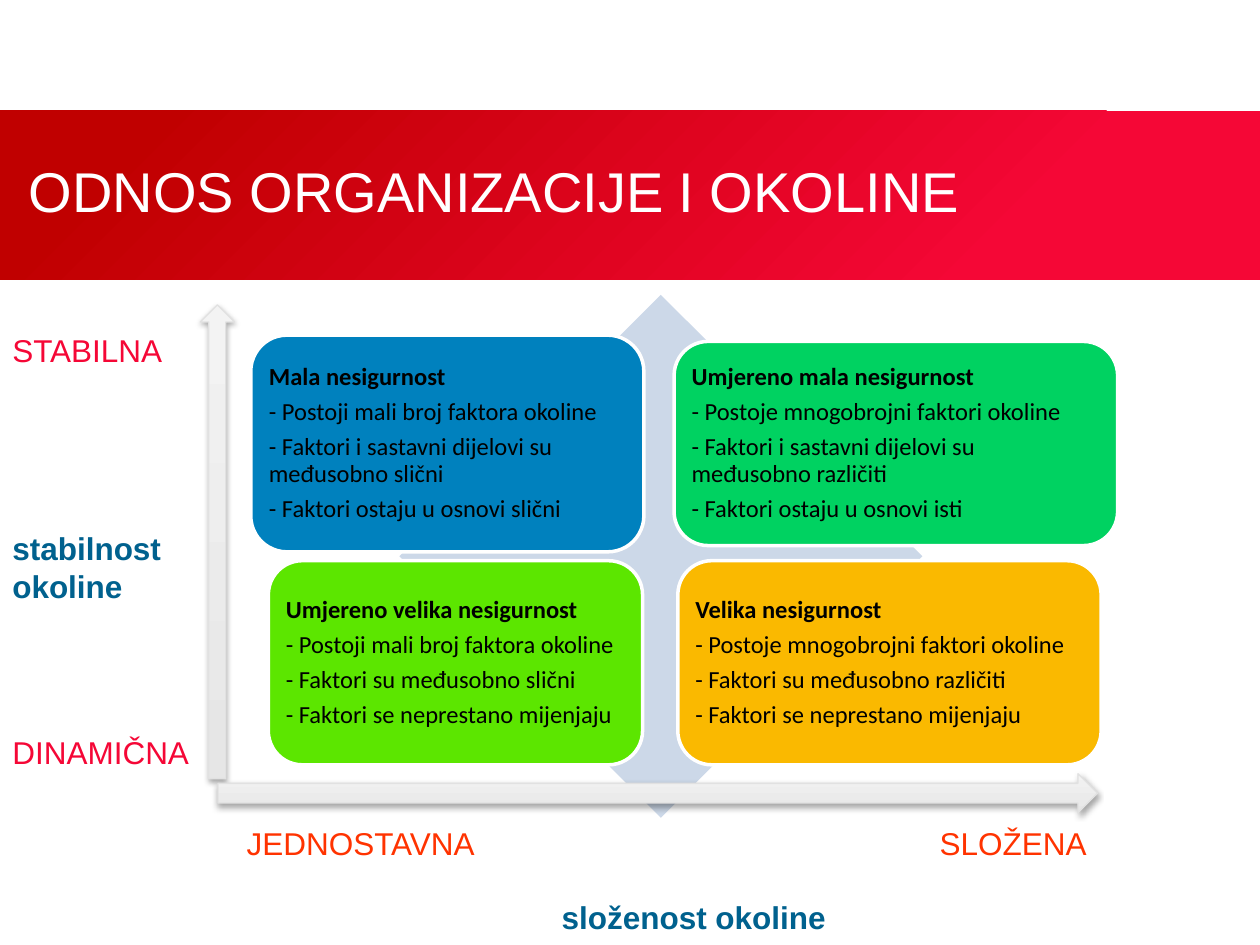
from dataclasses import dataclass

from lxml import etree
from pptx import Presentation
from pptx.dml.color import RGBColor
from pptx.enum.shapes import MSO_SHAPE
from pptx.enum.text import MSO_ANCHOR, PP_ALIGN
from pptx.oxml import parse_xml
from pptx.oxml.ns import nsdecls, qn
from pptx.util import Inches, Pt

RECTANGLE, DIAMOND = MSO_SHAPE.RECTANGLE, MSO_SHAPE.DIAMOND
ROUNDED = MSO_SHAPE.ROUNDED_RECTANGLE
UP_ARROW, RIGHT_ARROW = MSO_SHAPE.UP_ARROW, MSO_SHAPE.RIGHT_ARROW
MIDDLE, LEFT = MSO_ANCHOR.MIDDLE, PP_ALIGN.LEFT


@dataclass(frozen=True)
class Theme:
    red: str = "F50736"
    dark_red: str = "C00000"
    orange: str = "FF3300"
    blue: str = "00618E"
    pale_blue: str = "CCD8E8"
    white: str = "FFFFFF"
    black: str = "000000"
    arrow_dark: str = "E6E6E6"
    arrow_light: str = "F3F3F3"
    arrow_line: str = "E1E1E1"
    heading_font: str = "Arial"
    card_font: str = "Calibri"
    title_size: int = 32
    label_size: int = 18
    card_size: int = 14


THEME = Theme()

# box, fill, heading, points
QUADRANTS = [
    ((1.99, 2.66, 3.12, 1.72), "0081BE", "Mala nesigurnost",
     ["Postoji mali broj faktora okoline",
      "Faktori i sastavni dijelovi su međusobno slični",
      "Faktori ostaju u osnovi slični"]),
    ((5.35, 2.71, 3.52, 1.62), "00D261", "Umjereno mala nesigurnost",
     ["Postoje mnogobrojni faktori okoline",
      "Faktori i sastavni dijelovi su međusobno različiti",
      "Faktori ostaju u osnovi isti"]),
    ((2.13, 4.45, 2.97, 1.62), "5CE600", "Umjereno velika nesigurnost",
     ["Postoji mali broj faktora okoline",
      "Faktori su međusobno slični",
      "Faktori se neprestano mijenjaju"]),
    ((5.38, 4.45, 3.36, 1.62), "FAB900", "Velika nesigurnost",
     ["Postoje mnogobrojni faktori okoline",
      "Faktori su međusobno različiti",
      "Faktori se neprestano mijenjaju"]),
]

# box, text, colour, bold
AXIS_LABELS = [
    ((0, 2.58, 1.43, 0.4), "STABILNA", THEME.red, False),
    ((0, 4.15, 1.94, 0.71), "stabilnost okoline", THEME.blue, True),
    ((0, 5.77, 1.7, 0.4), "DINAMIČNA", THEME.red, False),
    ((1.86, 6.49, 2.2, 0.4), "JEDNOSTAVNA", THEME.orange, False),
    ((7.36, 6.49, 1.5, 0.4), "SLOŽENA", THEME.orange, False),
    ((4.36, 7.08, 2.5, 0.4), "složenost okoline", THEME.blue, True),
]


def inches(box):
    return [Inches(value) for value in box]


def colour(code):
    return RGBColor.from_string(code)


def style_font(font, name, size, code, bold=False):
    font.name, font.size, font.bold = name, Pt(size), bold
    font.color.rgb = colour(code)


def add_shape(page, kind, box, fill=None):
    """Add a preset shape without shadow or line."""
    shape = page.shapes.add_shape(kind, *inches(box))
    shape.shadow.inherit = False
    shape.line.fill.background()
    if fill:
        shape.fill.solid()
        shape.fill.fore_color.rgb = colour(fill)
    return shape


def set_gradient(shape, angle, stops):
    """Fill with two (position, colour) stops; the angle is counter-clockwise."""
    shape.fill.gradient()
    shape.fill.gradient_angle = angle
    for stop, (position, code) in zip(shape.fill.gradient_stops, stops):
        stop.position = position
        stop.color.rgb = colour(code)


def set_outline(shape, code, width):
    shape.line.color.rgb = colour(code)
    shape.line.width = Pt(width)


def add_label(page, box, text, code, size=THEME.label_size, bold=False):
    label = page.shapes.add_textbox(*inches(box))
    frame = label.text_frame
    frame.word_wrap = True
    frame.text = text
    style_font(frame.paragraphs[0].runs[0].font, THEME.heading_font, size, code, bold)
    return label


def add_banner(page, box):
    banner = add_shape(page, RECTANGLE, box)
    set_gradient(banner, 135, [(0.2, THEME.red), (0.89, THEME.dark_red)])
    left, top, width, _ = box
    title = add_label(page, (left + 0.13, top + 0.32, width - 2.24, 0.62),
                      "ODNOS ORGANIZACIJE I OKOLINE", THEME.white, THEME.title_size)
    title.text_frame.vertical_anchor = MIDDLE


def add_quadrant(page, box, fill, heading, points):
    card = add_shape(page, ROUNDED, box, fill)
    set_outline(card, THEME.white, 2)
    frame = card.text_frame
    frame.word_wrap = True
    frame.vertical_anchor = MIDDLE
    frame.margin_left = frame.margin_right = Inches(0.06)
    frame.margin_top = frame.margin_bottom = Inches(0.06)
    frame.text = "\n".join([heading] + [f"- {point}" for point in points])
    for index, para in enumerate(frame.paragraphs):
        para.alignment = LEFT
        para.line_spacing = 0.9
        para.space_after = Pt(4.9)
        style_font(para.runs[0].font, THEME.card_font, THEME.card_size,
                   THEME.black, bold=index == 0)


def add_matrix(page, box):
    add_shape(page, DIAMOND, box, THEME.pale_blue)
    for quadrant in QUADRANTS:
        add_quadrant(page, *quadrant)


def add_axis(page, kind, box):
    """Add a block arrow with a soft shadow below it."""
    arrow = add_shape(page, kind, box)
    set_gradient(arrow, 90, [(0, THEME.arrow_dark), (1, THEME.arrow_light)])
    set_outline(arrow, THEME.arrow_line, 0.75)
    effects = arrow.element.spPr.find(qn("a:effectLst"))
    shadow = parse_xml(
        f'<a:outerShdw {nsdecls("a")} blurRad="{Pt(3.1)}" dist="{Pt(1.8)}" '
        'dir="5400000" rotWithShape="0"/>')
    shade = etree.SubElement(shadow, qn("a:srgbClr"), val=THEME.black)
    etree.SubElement(shade, qn("a:alpha"), val="35000")
    effects.append(shadow)


def main():
    deck = Presentation()
    deck.slide_width, deck.slide_height = Inches(10), Inches(7.5)
    page = deck.slides.add_slide(deck.slide_layouts[6])
    add_banner(page, (0, 0.88, 10, 1.34))
    add_matrix(page, (3.17, 2.34, 4.15, 4.15))
    for box, text, code, bold in AXIS_LABELS:
        add_label(page, box, text, code, bold=bold)
    add_axis(page, UP_ARROW, (1.59, 2.42, 0.27, 3.76))
    add_axis(page, RIGHT_ARROW, (1.73, 6.14, 6.98, 0.31))
    deck.save("out.pptx")


if __name__ == "__main__":
    main()
